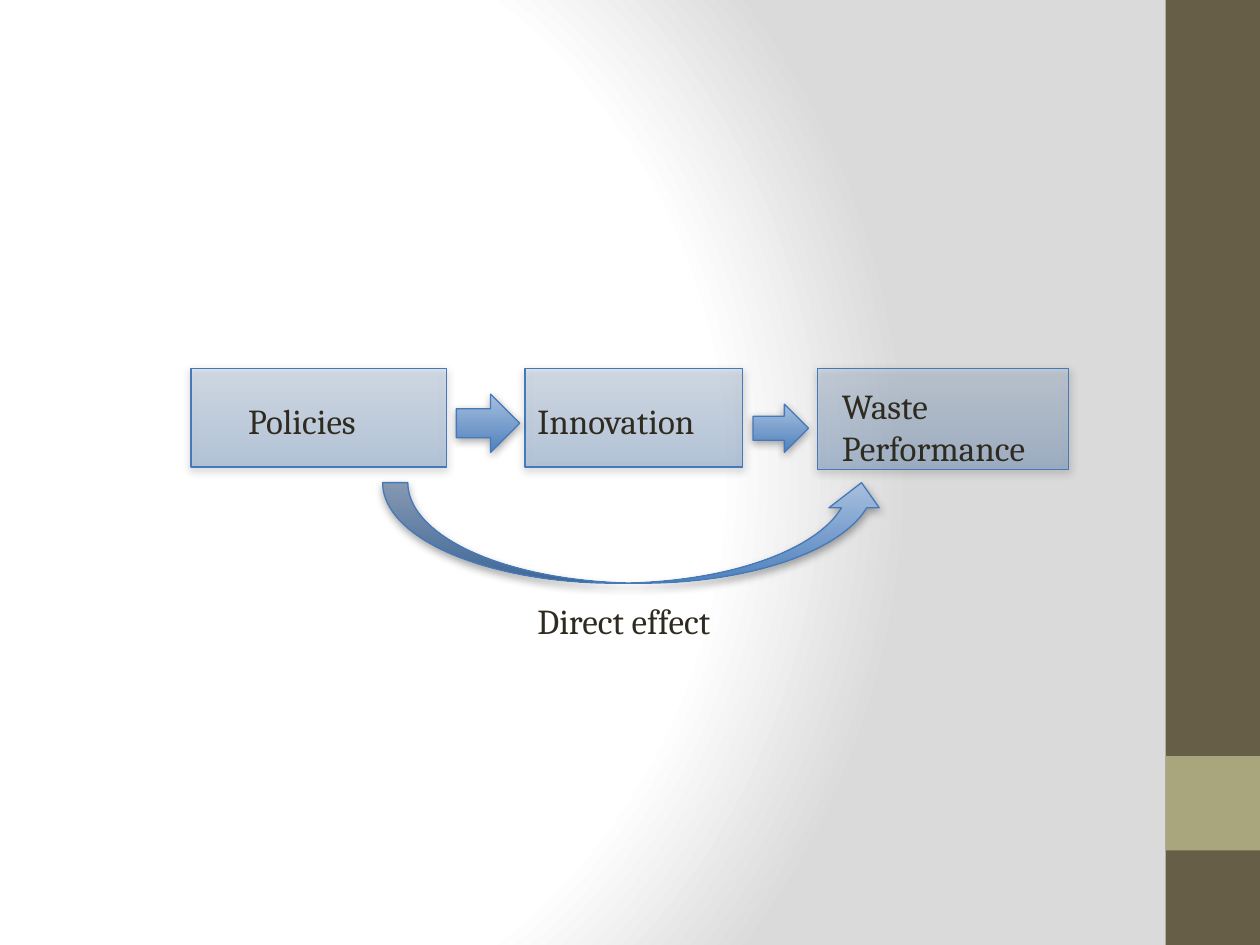
from dataclasses import dataclass

from lxml import etree
from pptx import Presentation
from pptx.dml.color import RGBColor
from pptx.enum.shapes import MSO_SHAPE
from pptx.oxml.ns import qn
from pptx.util import Pt

RECT = MSO_SHAPE.RECTANGLE
RIGHT_ARROW = MSO_SHAPE.RIGHT_ARROW
CURVED_UP_ARROW = MSO_SHAPE.CURVED_UP_ARROW
BLANK = 6
WIDTH, HEIGHT = 720, 540


@dataclass(frozen=True)
class Theme:
    font: str = "Cambria"
    text_size: float = 20
    text: str = "2F2B20"
    band: str = "675E47"
    accent: str = "A9A57C"
    line: str = "4579B8"
    line_width: float = 0.75
    grad_top: str = "A7BFDE"
    grad_bottom: str = "4F81BD"
    box_opacity: int = 32
    shadow: str = "000000"
    shadow_opacity: int = 35
    backdrop: tuple = ((0, "FFFFFF"), (75, "FFFFFF"), (100, "DADADA"))


def add_xml(parent, tag, **attrs):
    child = etree.SubElement(parent, qn(tag))
    for name, value in attrs.items():
        child.set(name, str(value))
    return child


class Builder:
    def __init__(self, slide, theme):
        self.s = slide
        self.theme = theme

    def background(self):
        """Radial gradient centred left of the slide's middle."""
        self.s.background.fill.gradient()
        grad = self.s.element.find(".//" + qn("a:gradFill"))
        for child in list(grad):
            grad.remove(child)
        stops = add_xml(grad, "a:gsLst")
        for pos, color in self.theme.backdrop:
            stop = add_xml(stops, "a:gs", pos=pos * 1000)
            add_xml(stop, "a:srgbClr", val=color)
        circle = add_xml(grad, "a:path", path="circle")
        add_xml(circle, "a:fillToRect", l=20000, t=50000, r=100000, b=50000)

    def shape(self, kind, x, y, w, h):
        sp = self.s.shapes.add_shape(kind, Pt(x), Pt(y), Pt(w), Pt(h))
        sp.shadow.inherit = False
        return sp

    def band(self, x, y, w, h, color):
        sp = self.shape(RECT, x, y, w, h)
        sp.fill.solid()
        sp.fill.fore_color.rgb = RGBColor.from_string(color)
        sp.line.fill.background()

    def glossy(self, kind, x, y, w, h, opacity=100):
        """Vertical blue gradient with a thin outline and a soft shadow."""
        t = self.theme
        sp = self.shape(kind, x, y, w, h)
        sp.fill.gradient()
        sp.fill.gradient_angle = 270
        for stop, pos, color in zip(sp.fill.gradient_stops, (0, 1), (t.grad_top, t.grad_bottom)):
            stop.position = pos
            stop.color.rgb = RGBColor.from_string(color)
        props = sp.element.spPr
        if opacity < 100:
            for clr in props.iter(qn("a:srgbClr")):
                add_xml(clr, "a:alpha", val=opacity * 1000)
        sp.line.color.rgb = RGBColor.from_string(t.line)
        sp.line.width = Pt(t.line_width)
        shadow = add_xml(props.find(qn("a:effectLst")), "a:outerShdw", blurRad=Pt(5),
                         dist=Pt(1.8), dir=90 * 60000, rotWithShape=0)
        clr = add_xml(shadow, "a:srgbClr", val=t.shadow)
        add_xml(clr, "a:alpha", val=t.shadow_opacity * 1000)

    def label(self, text, x, y, w, h):
        tf = self.s.shapes.add_textbox(Pt(x), Pt(y), Pt(w), Pt(h)).text_frame
        tf.word_wrap = True
        tf.text = text
        font = tf.paragraphs[0].runs[0].font
        font.name = self.theme.font
        font.size = Pt(self.theme.text_size)
        font.color.rgb = RGBColor.from_string(self.theme.text)


def main():
    prs = Presentation()
    prs.slide_width, prs.slide_height = Pt(WIDTH), Pt(HEIGHT)
    theme = Theme()
    b = Builder(prs.slides.add_slide(prs.slide_layouts[BLANK]), theme)

    # Backdrop and side band
    b.background()
    band_w = 54
    band_x = WIDTH - band_w
    b.band(band_x, 0, band_w, HEIGHT, theme.band)
    b.band(band_x, 432, band_w, band_w, theme.accent)

    # Boxes of the causal chain
    for x, w, h in ((109.2, 146, 56.3), (300, 124.5, 56.3), (467.3, 143.5, 57.5)):
        b.glossy(RECT, x, 210.7, w, h, theme.box_opacity)

    # Arrows: two steps and the direct path
    b.glossy(RIGHT_ARROW, 260.8, 225.2, 36.2, 33.3)
    b.glossy(RIGHT_ARROW, 430.3, 231, 31.7, 27.5)
    b.glossy(CURVED_UP_ARROW, 218.7, 275.8, 288, 57.5)

    # Labels
    b.label("Policies", 134.7, 224.6, 108, 39)
    b.label("Innovation", 300, 224.6, 116.5, 36.5)
    b.label("Waste Performance", 474, 216, 130.5, 44.5)
    b.label("Direct effect", 300, 339, 162, 27.5)

    prs.save("out.pptx")


if __name__ == "__main__":
    main()
